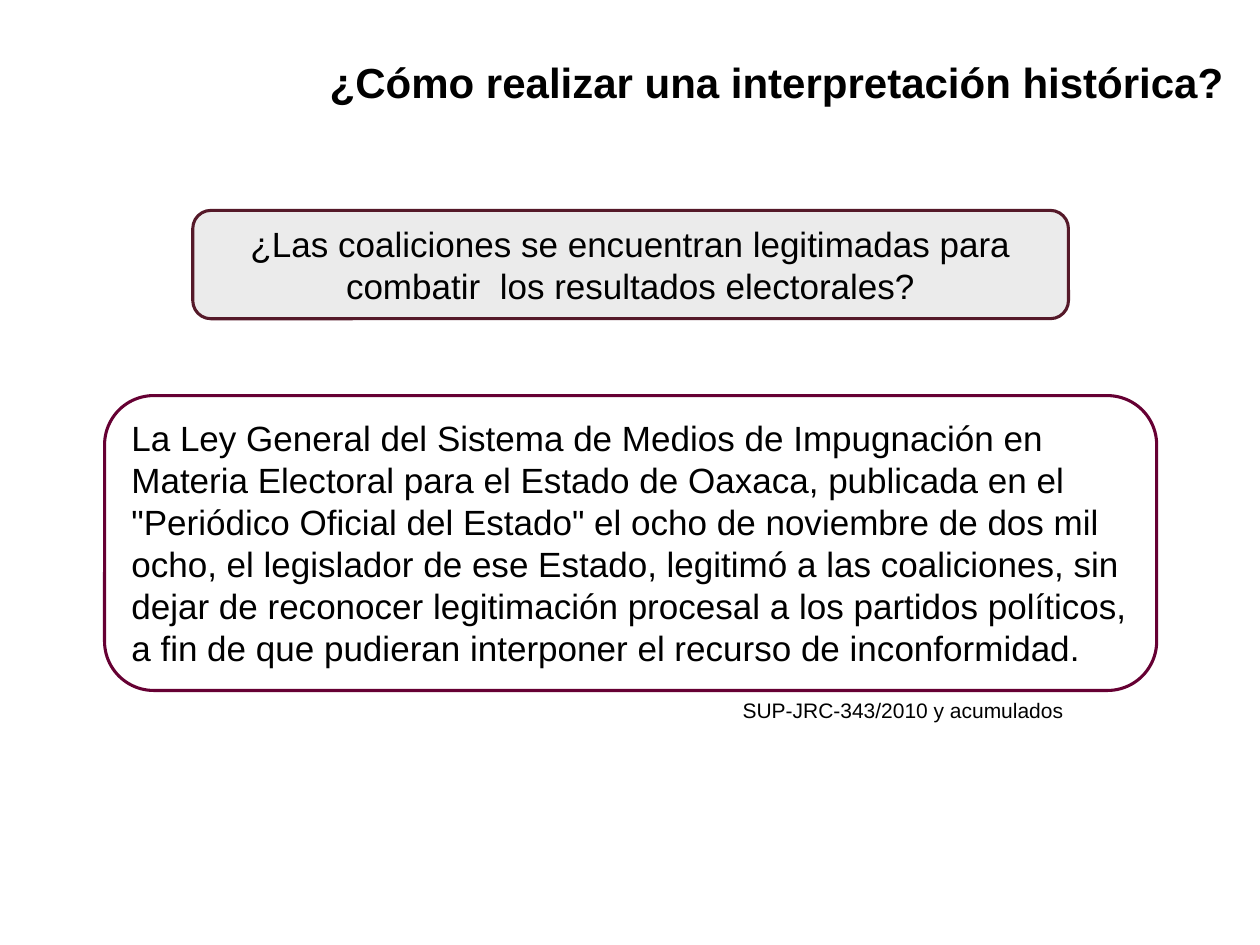
from dataclasses import dataclass
from typing import Optional

from lxml.etree import SubElement
from pptx import Presentation
from pptx.dml.color import RGBColor
from pptx.enum.shapes import MSO_SHAPE
from pptx.enum.text import MSO_ANCHOR, PP_ALIGN
from pptx.oxml.ns import qn
from pptx.util import Inches, Pt

COLORS = {
    "text": "000000",
    "panel": "D9D9D9",
    "question_line": "551929",
    "answer_line": "660033",
}


@dataclass
class Box:
    left: float
    top: float
    width: float
    height: float

    def lengths(self) -> tuple:
        return tuple(Inches(v) for v in (self.left, self.top, self.width, self.height))


@dataclass
class Panel:
    box: Box
    text: str
    line: str
    align: PP_ALIGN
    anchor: MSO_ANCHOR
    fill: Optional[str] = None
    opacity: int = 100


@dataclass
class Label:
    box: Box
    text: str
    size: int
    bold: bool = False
    wrap: bool = True


def rgb(name: str) -> RGBColor:
    return RGBColor.from_string(COLORS[name])


def set_text(tf, text: str, size: int, align: PP_ALIGN, bold: bool = False) -> None:
    tf.text = text
    p = tf.paragraphs[0]
    p.alignment = align
    r = p.runs[0]
    r.font.name = "Arial"
    r.font.size = Pt(size)
    r.font.bold = bold
    r.font.color.rgb = rgb("text")


def draw_panel(s, panel: Panel) -> None:
    sp = s.shapes.add_shape(MSO_SHAPE.ROUNDED_RECTANGLE, *panel.box.lengths())
    sp.shadow.inherit = False
    sp.line.color.rgb = rgb(panel.line)
    sp.line.width = Pt(1.75)
    if panel.fill:
        sp.fill.solid()
        sp.fill.fore_color.rgb = rgb(panel.fill)
        color = sp.fill._xPr.find(".//" + qn("a:srgbClr"))
        SubElement(color, qn("a:alpha"), val=str(panel.opacity * 1000))
    else:
        sp.fill.background()
    tf = sp.text_frame
    tf.word_wrap = True
    tf.vertical_anchor = panel.anchor
    set_text(tf, panel.text, 20, panel.align)


def draw_label(s, label: Label) -> None:
    tf = s.shapes.add_textbox(*label.box.lengths()).text_frame
    tf.word_wrap = label.wrap
    set_text(tf, label.text, label.size, PP_ALIGN.RIGHT, label.bold)


PANELS = [
    Panel(Box(1.53, 1.67, 6.95, 0.86),
          "¿Las coaliciones se encuentran legitimadas para combatir  los "
          "resultados electorales?",
          "question_line", PP_ALIGN.CENTER, MSO_ANCHOR.MIDDLE, "panel", 50),
    Panel(Box(0.83, 3.14, 8.35, 2.34),
          "La Ley General del Sistema de Medios de Impugnación en Materia "
          "Electoral para el Estado de Oaxaca, publicada en el \"Periódico "
          "Oficial del Estado\" el ocho de noviembre de dos mil ocho, el "
          "legislador de ese Estado, legitimó a las coaliciones, sin dejar de "
          "reconocer legitimación procesal a los partidos políticos, a fin de "
          "que pudieran interponer el recurso de inconformidad.",
          "answer_line", PP_ALIGN.LEFT, MSO_ANCHOR.TOP),
]

LABELS = [
    Label(Box(5.41, 5.49, 3.13, 0.3), "SUP-JRC-343/2010 y acumulados", 12),
    Label(Box(2.51, 0.4, 7.3, 0.5),
          "¿Cómo realizar una interpretación histórica?", 24, True, False),
]


def main() -> None:
    prs = Presentation()
    prs.slide_width, prs.slide_height = Inches(10), Inches(7.5)
    s = prs.slides.add_slide(prs.slide_layouts[6])

    # Question and answer
    for panel in PANELS:
        draw_panel(s, panel)

    # Case reference and title
    for label in LABELS:
        draw_label(s, label)

    prs.save("out.pptx")


if __name__ == "__main__":
    main()
